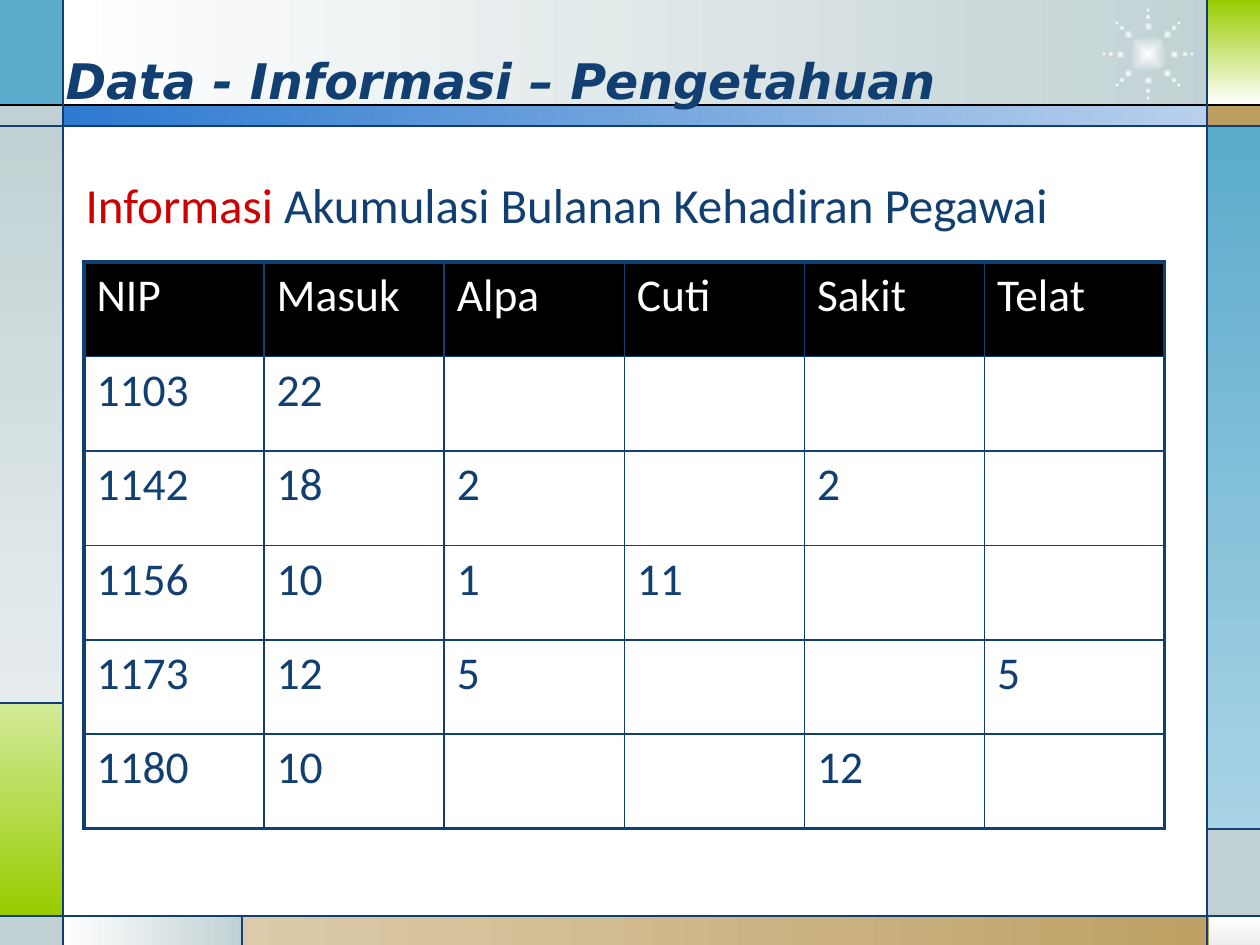
from math import cos, radians, sin

from lxml.etree import SubElement
from pptx import Presentation
from pptx.dml.color import RGBColor
from pptx.enum.shapes import MSO_CONNECTOR, MSO_SHAPE
from pptx.enum.text import MSO_ANCHOR, MSO_AUTO_SIZE, PP_ALIGN
from pptx.oxml.ns import qn
from pptx.util import Emu, Pt

PX = 914400 // 126
COLORS = {
    "navy": "113F71", "red": "CC0000", "black": "000000", "white": "FFFFFF",
    "mist": "C1D1D3", "pale mist": "E7EDEE", "sky": "5AABCC", "pale sky": "AAD3E5",
    "lime": "99CC00", "pale lime": "D3EA98", "sand": "BD9E61", "pale sand": "DCCBAA",
    "blue": "2D7ACF", "pale blue": "B8D0EC", "grey": "EDEDED",
}
RIGHTWARD, DOWNWARD = 0, 270


def rgb(name):
    return RGBColor.from_string(COLORS[name])


def add_block(kind, box, start, end=None, angle=RIGHTWARD):
    block = slide.shapes.add_shape(kind, *[Emu(n * PX) for n in box])
    block.shadow.inherit = False
    block.line.fill.background()
    if end is None:
        block.fill.solid()
        block.fill.fore_color.rgb = rgb(start)
    else:
        block.fill.gradient()
        block.fill.gradient_angle = angle
        for stop, name in zip(block.fill.gradient_stops, (start, end)):
            stop.color.rgb = rgb(name)
    return block


prs = Presentation()
prs.slide_width, prs.slide_height = Emu(1260 * PX), Emu(945 * PX)
slide = prs.slides.add_slide(prs.slide_layouts[1])

frame_blocks = [
    ((63, 0, 1168, 106), "white", "mist", RIGHTWARD),
    ((0, 0, 63, 106), "sky"),
    ((0, 105, 63, 21), "mist"),
    ((0, 126, 63, 577), "mist", "pale mist", DOWNWARD),
    ((0, 703, 63, 213), "pale lime", "lime", DOWNWARD),
    ((0, 917, 63, 28), "mist"),
    ((63, 916, 180, 29), "white", "mist", RIGHTWARD),
    ((242, 916, 1018, 29), "pale sand", "sand", RIGHTWARD),
    ((1209, 917, 51, 28), "white", "grey", DOWNWARD),
    ((1208, 829, 52, 88), "mist"),
    ((1207, 126, 53, 703), "sky", "pale sky", DOWNWARD),
    ((1207, 105, 53, 21), "sand"),
    ((1208, 0, 52, 105), "lime", "white", DOWNWARD),
    ((63, 105, 1145, 21), "blue", "pale blue", RIGHTWARD),
]
for box, *colors in frame_blocks:
    add_block(MSO_SHAPE.RECTANGLE, box, *colors)

sun_x, sun_y = 1148, 54
sun_dots = [(0, 0, 38)] + [
    (angle, distance, size)
    for angle in range(0, 360, 45)
    for distance, size in ((27, 9), (37, 6), (44, 4))
]
for angle, distance, size in sun_dots:
    left = round(sun_x + distance * cos(radians(angle)) - size / 2)
    top = round(sun_y + distance * sin(radians(angle)) - size / 2)
    dot = add_block(MSO_SHAPE.OVAL, (left, top, size, size), "white", "mist")
    gradient = dot._element.spPr.find(qn("a:gradFill"))
    gradient.remove(gradient.find(qn("a:lin")))
    radial = SubElement(gradient, qn("a:path"), path="shape")
    SubElement(radial, qn("a:fillToRect"), l="50000", t="50000", r="50000", b="50000")

frame_lines = [
    (0, 105, 1260, 105, "black"),
    (0, 126, 1260, 126, "navy"),
    (0, 916, 1260, 916, "navy"),
    (63, 0, 63, 945, "navy"),
    (1207, 0, 1207, 945, "navy"),
    (63, 703, 0, 703, "navy"),
    (242, 916, 242, 945, "navy"),
    (1207, 829, 1260, 829, "navy"),
]
for *ends, color in frame_lines:
    rule = slide.shapes.add_connector(MSO_CONNECTOR.STRAIGHT, *[Emu(n * PX) for n in ends])
    rule.line.color.rgb = rgb(color)
    rule.line.width = Pt(0.75)
    SubElement(rule._element.spPr, qn("a:effectLst"))

title, subtitle = slide.placeholders
for holder, box, anchor in (
    (title, (53, 53, 1155, 63), MSO_ANCHOR.BOTTOM),
    (subtitle, (73, 168, 1103, 73), MSO_ANCHOR.TOP),
):
    slide.shapes._spTree.append(holder._element)
    holder.left, holder.top, holder.width, holder.height = [Emu(n * PX) for n in box]
    holder.text_frame.auto_size = MSO_AUTO_SIZE.NONE
    holder.text_frame.vertical_anchor = anchor

heading = title.text_frame.paragraphs[0]
heading.text = "Data - Informasi – Pengetahuan"
heading.alignment = PP_ALIGN.LEFT
heading.font.name = "DejaVu Sans"
heading.font.size = Pt(28)
heading.font.bold = heading.font.italic = True
heading.font.color.rgb = rgb("navy")

caption = subtitle.text_frame.paragraphs[0]
caption_format = caption._p.get_or_add_pPr()
caption_format.set("marL", str(48 * PX))
caption_format.set("indent", str(-48 * PX))
SubElement(caption_format, qn("a:buNone"))
caption.space_before = Pt(0)
caption.font.name = "Calibri"
caption.font.size = Pt(28)
for words, color in (("Informasi ", "red"), ("Akumulasi Bulanan Kehadiran Pegawai", "navy")):
    run = caption.add_run()
    run.text = words
    run.font.color.rgb = rgb(color)

attendance = [
    ["NIP", "Masuk", "Alpa", "Cuti", "Sakit", "Telat"],
    ["1103", "22", "", "", "", ""],
    ["1142", "18", "2", "", "2", ""],
    ["1156", "10", "1", "11", "", ""],
    ["1173", "12", "5", "", "", "5"],
    ["1180", "10", "", "", "12", ""],
]
last = len(attendance) - 1
table = slide.shapes.add_table(
    last + 1, last + 1, *[Emu(n * PX) for n in (84, 262, 1081, 567)]
).table
table.first_row = table.horz_banding = False
for r, record in enumerate(attendance):
    for c, value in enumerate(record):
        cell = table.cell(r, c)
        cell_format = cell._tc.get_or_add_tcPr()
        outer_edges = {"lnL": c == 0, "lnR": c == last, "lnT": r == 0, "lnB": r == last}
        for edge, outer in outer_edges.items():
            width = Pt(2.25) if outer else Pt(1)
            border = SubElement(cell_format, qn(f"a:{edge}"), w=str(width))
            SubElement(SubElement(border, qn("a:solidFill")), qn("a:srgbClr"), val=COLORS["navy"])
        if r == 0:
            cell.fill.solid()
            cell.fill.fore_color.rgb = rgb("black")
        else:
            cell.fill.background()
        cell.text = value
        entry = cell.text_frame.paragraphs[0]
        entry.font.name = "Calibri"
        entry.font.size = Pt(26)
        entry.font.color.rgb = rgb("white" if r == 0 else "navy")

prs.save("out.pptx")
